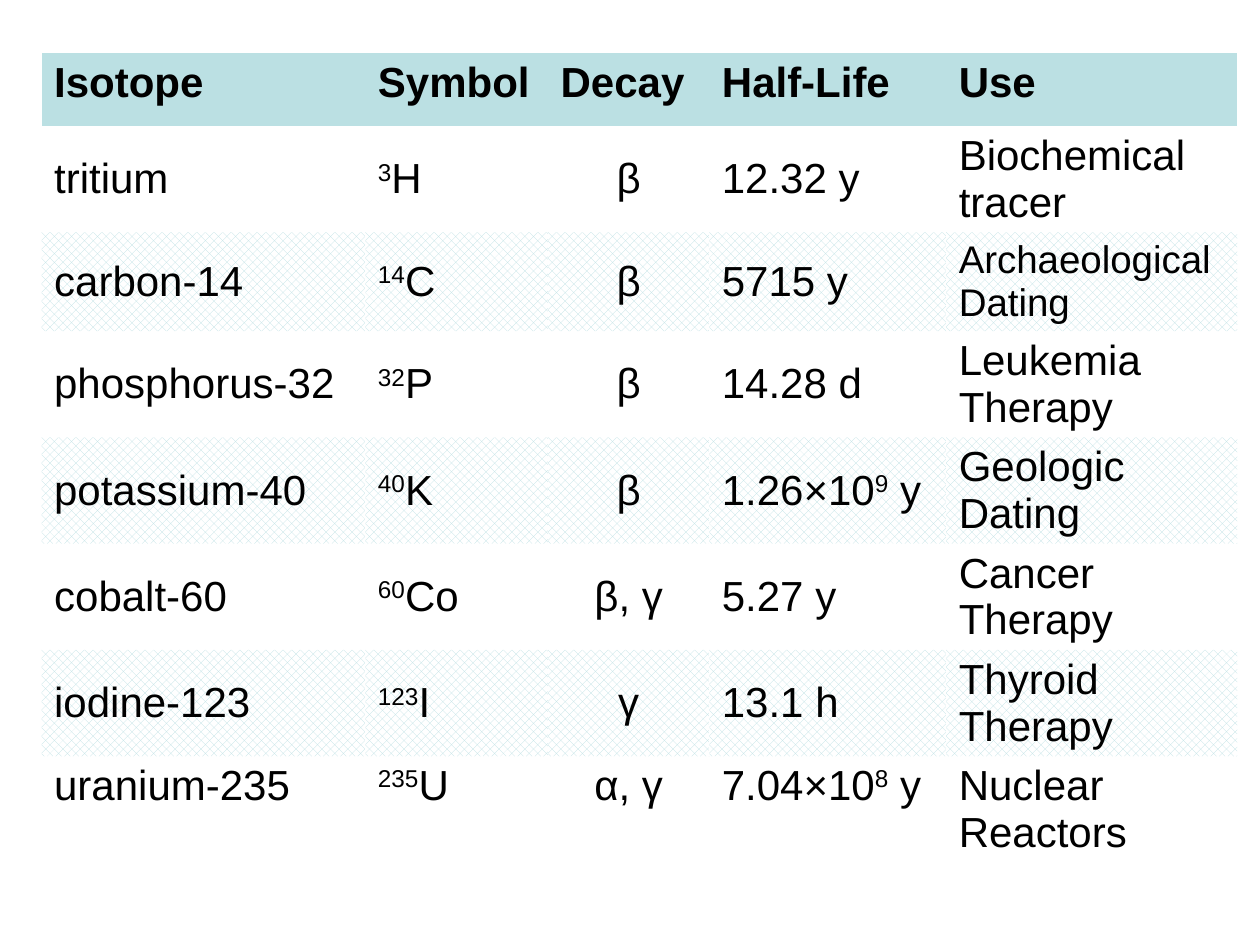
from dataclasses import dataclass

from lxml import etree
from pptx import Presentation
from pptx.dml.color import RGBColor
from pptx.enum import dml, text
from pptx.oxml import ns
from pptx.util import Inches, Pt


@dataclass(frozen=True)
class Theme:
    font: str = "Arial"
    ink: RGBColor = RGBColor(0x00, 0x00, 0x00)
    accent: RGBColor = RGBColor(0xBB, 0xE0, 0xE3)
    paper: RGBColor = RGBColor(0xFF, 0xFF, 0xFF)
    size: int = 24
    small: int = 22
    space_before: str = "20000"
    table_style: str = "{2D5ABB26-0587-4C30-8999-92F81FD0307C}"


theme = Theme()


def write(cell, content, size=theme.size, bold=False, align=None, anchor=None):
    """Text between carets is set as superscript."""
    cell.vertical_anchor = anchor
    para = cell.text_frame.paragraphs[0]
    para.alignment = align
    space = etree.SubElement(para._p.get_or_add_pPr(), ns.qn("a:spcBef"))
    etree.SubElement(space, ns.qn("a:spcPct"), val=theme.space_before)
    for index, part in enumerate(content.split("^")):
        if not part:
            continue
        span = para.add_run()
        span.text = part
        span.font.name = theme.font
        span.font.size = Pt(size)
        span.font.bold = bold
        span.font.color.rgb = theme.ink
        if index % 2:
            span.font._element.set("baseline", "30000")


isotopes = [
    ("Isotope", "Symbol", "Decay", "Half-Life", "Use"),
    ("tritium", "^3^H", "β", "12.32 y", "Biochemical tracer"),
    ("carbon-14", "^14^C", "β", "5715 y", "Archaeological Dating"),
    ("phosphorus-32", "^32^P", "β", "14.28 d", "Leukemia Therapy"),
    ("potassium-40", "^40^K", "β", "1.26×10^9^ y", "Geologic Dating"),
    ("cobalt-60", "^60^Co", "β, γ", "5.27 y", "Cancer Therapy"),
    ("iodine-123", "^123^I", "γ", "13.1 h", "Thyroid Therapy"),
    ("uranium-235", "^235^U", "α, γ", "7.04×10^8^ y", "Nuclear Reactors"),
]
widths = [2.57, 1.45, 1.28, 1.88, 2.31]
heights = [0.58, 0.56, 0.56, 0.64, 0.56, 0.56, 0.6, 0.56]
decay_column = isotopes[0].index("Decay")
last_row = len(isotopes) - 1

deck = Presentation()
deck.slide_width, deck.slide_height = Inches(10), Inches(7.5)
page = deck.slides.add_slide(deck.slide_layouts[6])

frame = page.shapes.add_table(
    len(heights), len(widths), Inches(0.33), Inches(0.42),
    Inches(sum(widths)), Inches(sum(heights)))
table = frame.table
table._tbl.tblPr.find(ns.qn("a:tableStyleId")).text = theme.table_style
for column, width in zip(table.columns, widths):
    column.width = Inches(width)

for row_index, (values, height) in enumerate(zip(isotopes, heights)):
    table.rows[row_index].height = Inches(height)
    header = row_index == 0
    for column_index, value in enumerate(values):
        cell = table.cell(row_index, column_index)
        centred = column_index == decay_column and not header
        middle = 0 < row_index < last_row
        write(
            cell, value, bold=header,
            size=theme.small if value == "Archaeological Dating" else theme.size,
            align=text.PP_ALIGN.CENTER if centred else None,
            anchor=text.MSO_ANCHOR.MIDDLE if middle else None)
        if header:
            cell.fill.solid()
            cell.fill.fore_color.rgb = theme.accent
        elif row_index % 2 == 0:
            cell.fill.patterned()
            cell.fill.pattern = dml.MSO_PATTERN.PERCENT_50
            cell.fill.fore_color.rgb = theme.accent
            cell.fill.back_color.rgb = theme.paper
        else:
            cell.fill.background()

deck.save("out.pptx")
